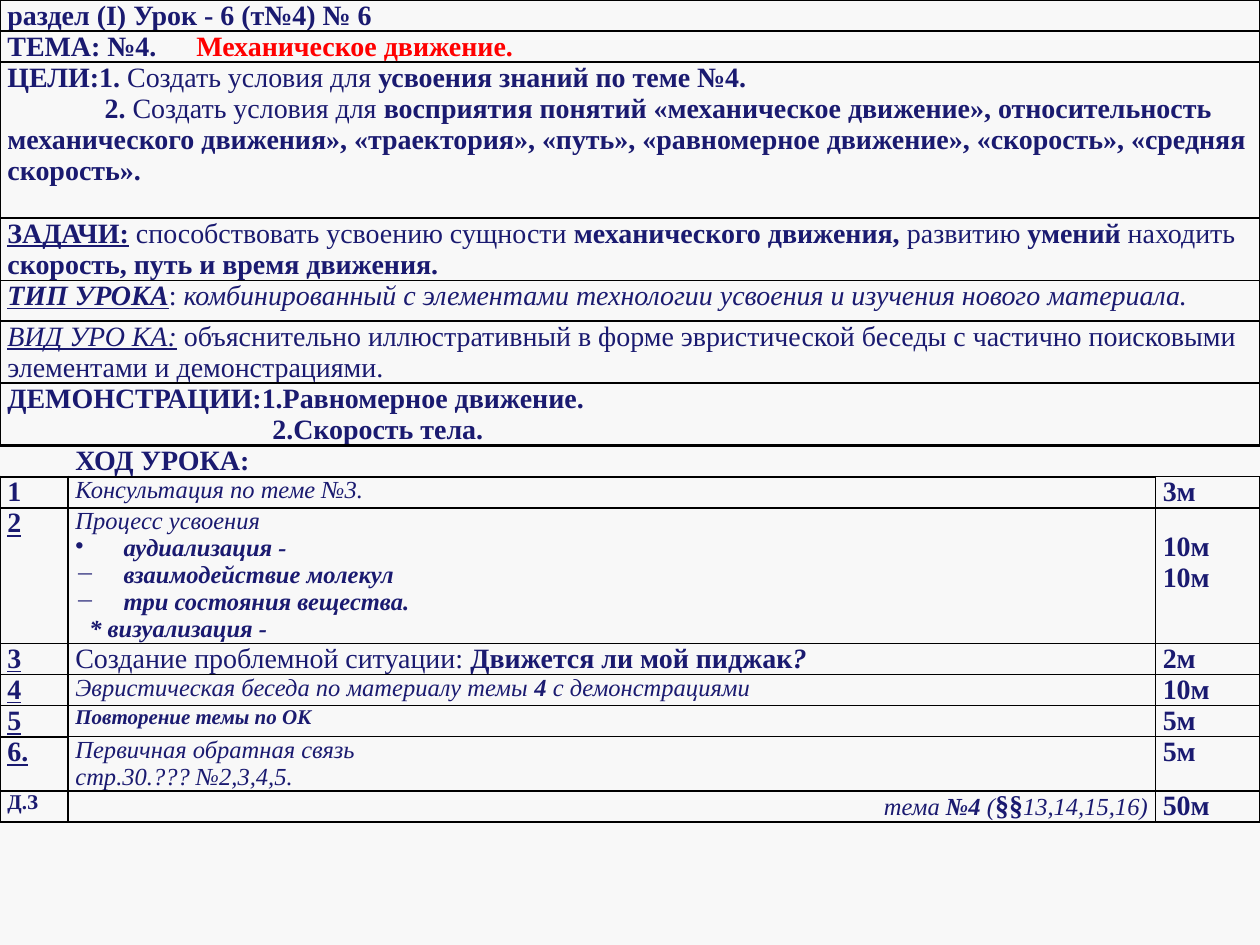
"""Build a lesson plan slide: one table with goals, tasks and timed stages."""
from dataclasses import dataclass

from lxml.etree import SubElement
from pptx import Presentation
from pptx.dml.color import RGBColor
from pptx.enum.text import PP_ALIGN
from pptx.oxml.ns import qn
from pptx.util import Cm, Pt

NAVY, RED, BLACK, PAPER = "1A1A70", "FF0000", "000000", "F8F8F8"
COLUMN_WIDTHS = [1.37, 21.92, 2.11]
LINE_HEIGHT = 0.62
THIN, THICK = 1, 1.5


def colour(hex_text):
    return RGBColor.from_string(hex_text)


@dataclass
class Words:
    text: str
    style: str = "b"
    size: float = 16
    ink: str = NAVY


@dataclass
class Line:
    words: list
    left: float = 0
    first: float = 0
    bullet: str = ""
    tab: float = 0
    alignment: PP_ALIGN = PP_ALIGN.LEFT


def line(text, style="b", size=16, **layout):
    return Line([Words(text, style, size)], **layout)


class LessonSlide:
    def __init__(self, presentation, font):
        self.font = font
        self.slide = presentation.slides.add_slide(presentation.slide_layouts[6])
        fill = self.slide.background.fill
        fill.solid()
        fill.fore_color.rgb = colour(PAPER)

    def table(self, widths, heights):
        shape = self.slide.shapes.add_table(
            len(heights), len(widths), Cm(0), Cm(0), Cm(sum(widths)), Cm(sum(heights)))
        table = shape.table
        table.first_row = table.horz_banding = False
        for column, width in zip(table.columns, widths):
            column.width = Cm(width)
        for row, height in zip(table.rows, heights):
            row.height = Cm(height)
        return table

    def frame(self, cell, left, top, right, bottom):
        cell.margin_left = cell.margin_right = Cm(0.15)
        cell.margin_top = cell.margin_bottom = Cm(0)
        properties = cell._tc.get_or_add_tcPr()
        for side, width in zip("LRTB", (left, right, top, bottom)):
            border = SubElement(properties, qn(f"a:ln{side}"), w=str(Pt(width)))
            if width:
                fill = SubElement(border, qn("a:solidFill"))
                SubElement(fill, qn("a:srgbClr"), val=BLACK)
            else:
                SubElement(border, qn("a:noFill"))
        cell.fill.background()

    def text(self, cell, lines):
        frame = cell.text_frame
        for index, content in enumerate(lines):
            paragraph = frame.paragraphs[0] if index == 0 else frame.add_paragraph()
            self.paragraph(paragraph, content)
        if not lines:
            SubElement(frame.paragraphs[0]._p, qn("a:endParaRPr"), sz="1200")

    def paragraph(self, paragraph, content):
        paragraph.alignment = content.alignment
        properties = paragraph._p.get_or_add_pPr()
        properties.set("marL", str(Cm(content.left)))
        properties.set("indent", str(Cm(content.first)))
        if content.bullet:
            SubElement(properties, qn("a:buChar"), char=content.bullet)
        else:
            SubElement(properties, qn("a:buNone"))
        if content.tab:
            stops = SubElement(properties, qn("a:tabLst"))
            SubElement(stops, qn("a:tab"), pos=str(Cm(content.tab)), algn="l")
        for words in content.words:
            run = paragraph.add_run()
            run.text = words.text
            font = run.font
            font.name, font.size = self.font, Pt(words.size)
            font.bold, font.italic = "b" in words.style, "i" in words.style
            font.underline = "u" in words.style
            font.color.rgb = colour(words.ink)


HEADER_ROWS = [
    (LINE_HEIGHT, (THIN, THIN, THIN, THICK),
     [line("раздел (I)\tУрок - 6 (т№4) № 6", tab=17.3)]),
    (LINE_HEIGHT, (THICK,) * 4,
     [Line([Words("ТЕМА: №4.\t"), Words("Механическое движение.", ink=RED)], tab=15.95)]),
    (3.14, (THIN, THICK, THIN, THIN), [
        Line([Words("ЦЕЛИ:1."), Words(" Создать условия для ", ""),
              Words("усвоения знаний по теме №4.")]),
        Line([Words("2. "), Words("Создать условия для ", ""),
              Words("восприятия понятий «механическое движение», относительность "
                    "механического движения», «траектория», «путь», «равномерное "
                    "движение», «скорость», «средняя скорость».")], first=1.96)]),
    (1.25, (THIN,) * 4, [
        Line([Words("ЗАДАЧИ:", "bu"), Words(" способствовать усвоению сущности ", ""),
              Words("механического движения, "), Words("развитию ", ""),
              Words("умений "), Words("находить", ""),
              Words(" скорость, путь и время движения.")])]),
    (0.82, (THIN,) * 4, [
        Line([Words("ТИП УРОКА", "biu"), Words(": ", ""),
              Words("комбинированный с элементами технологии усвоения и изучения "
                    "нового материала.", "i")])]),
    (1.25, (THIN, THIN, THIN, THICK), [
        Line([Words("ВИД УРО КА:", "iu"),
              Words(" объяснительно иллюстративный в форме эвристической беседы с "
                    "частично поисковыми элементами и демонстрациями.", "")])]),
    (1.25, (THICK,) * 4, [
        line("ДЕМОНСТРАЦИИ:1.Равномерное движение."),
        line("2.Скорость тела.", first=5.34)]),
]

HANGING = {"left": 0.97, "first": -0.97}
STAGE_ROWS = [
    (LINE_HEIGHT, [], [line("ХОД УРОКА:")], []),
    (LINE_HEIGHT, [line("1")], [line("Консультация по теме №3.", "i", 14)], [line("3м")]),
    (2.72, [line("2", "bu")], [
        line("Процесс усвоения", "i", 14),
        line("аудиализация -", "bi", 14, bullet="•", **HANGING),
        line("взаимодействие молекул", "bi", 14, bullet="−", **HANGING),
        line("три состояния вещества.", "bi", 14, bullet="−", **HANGING),
        line("* визуализация -", "bi", 14, left=0.28)],
     [line("10м"), line("10м")]),
    (LINE_HEIGHT, [line("3", "bu")], [
        Line([Words("Создание проблемной ситуации: ", ""),
              Words("Движется ли мой пиджак"), Words("?", "bi")])], [line("2м")]),
    (LINE_HEIGHT, [line("4", "bu")], [
        Line([Words("Эвристическая беседа по материалу темы", "i", 14),
              Words(" 4", "bi", 14), Words(" с демонстрациями", "i", 14)])], [line("10м")]),
    (LINE_HEIGHT, [line("5", "bu")], [line("Повторение темы по ОК", "bi", 12)], [line("5м")]),
    (1.09, [line("6.", "bu")], [
        line("Первичная обратная связь", "i", 14),
        line("стр.30.??? №2,3,4,5.", "i", 14)], [line("5м")]),
    (LINE_HEIGHT, [line("Д.З", size=12)], [
        Line([Words("тема ", "i", 14), Words("№4", "bi", 14), Words(" (", "i", 14),
              Words("§§"), Words("13,14,15,16)", "i", 14)],
             alignment=PP_ALIGN.RIGHT)], [line("50м")]),
]


def stage_borders(index):
    """Return the left, top, right and bottom widths of the three cells of a stage."""
    last = len(STAGE_ROWS) - 1
    if index == 0:
        return [(0, THICK, 0, THICK)] * 2 + [(0, THICK, 0, THIN)]
    if index == last:
        return [(THICK, THICK, THIN, THICK), (THIN, THICK, THIN, THICK),
                (THIN, THICK, THICK, THICK)]
    number_top = THICK if index in (1, last - 1) else THIN
    number_bottom = THICK if index >= last - 2 else THIN
    top = THICK if index == 1 else THIN
    bottom = THICK if index == last - 1 else THIN
    return [(THICK, number_top, THICK, number_bottom), (THICK, top, THIN, bottom),
            (THIN, THIN, THIN, bottom)]


def main():
    presentation = Presentation()
    presentation.slide_width, presentation.slide_height = Cm(25.4), Cm(19.05)
    lesson = LessonSlide(presentation, "Times New Roman")
    heights = [row[0] for row in HEADER_ROWS + STAGE_ROWS]
    table = lesson.table(COLUMN_WIDTHS, heights)
    for index, (_, borders, lines) in enumerate(HEADER_ROWS):
        for column in range(len(COLUMN_WIDTHS)):
            lesson.frame(table.cell(index, column), *borders)
        table.cell(index, 0).merge(table.cell(index, len(COLUMN_WIDTHS) - 1))
        lesson.text(table.cell(index, 0), lines)
    for index, (_, *contents) in enumerate(STAGE_ROWS):
        for column, (lines, borders) in enumerate(zip(contents, stage_borders(index))):
            cell = table.cell(len(HEADER_ROWS) + index, column)
            lesson.frame(cell, *borders)
            lesson.text(cell, lines)
    table.cell(len(HEADER_ROWS) + 2, 2).margin_top = Cm(0.47)
    presentation.save("out.pptx")


if __name__ == "__main__":
    main()
